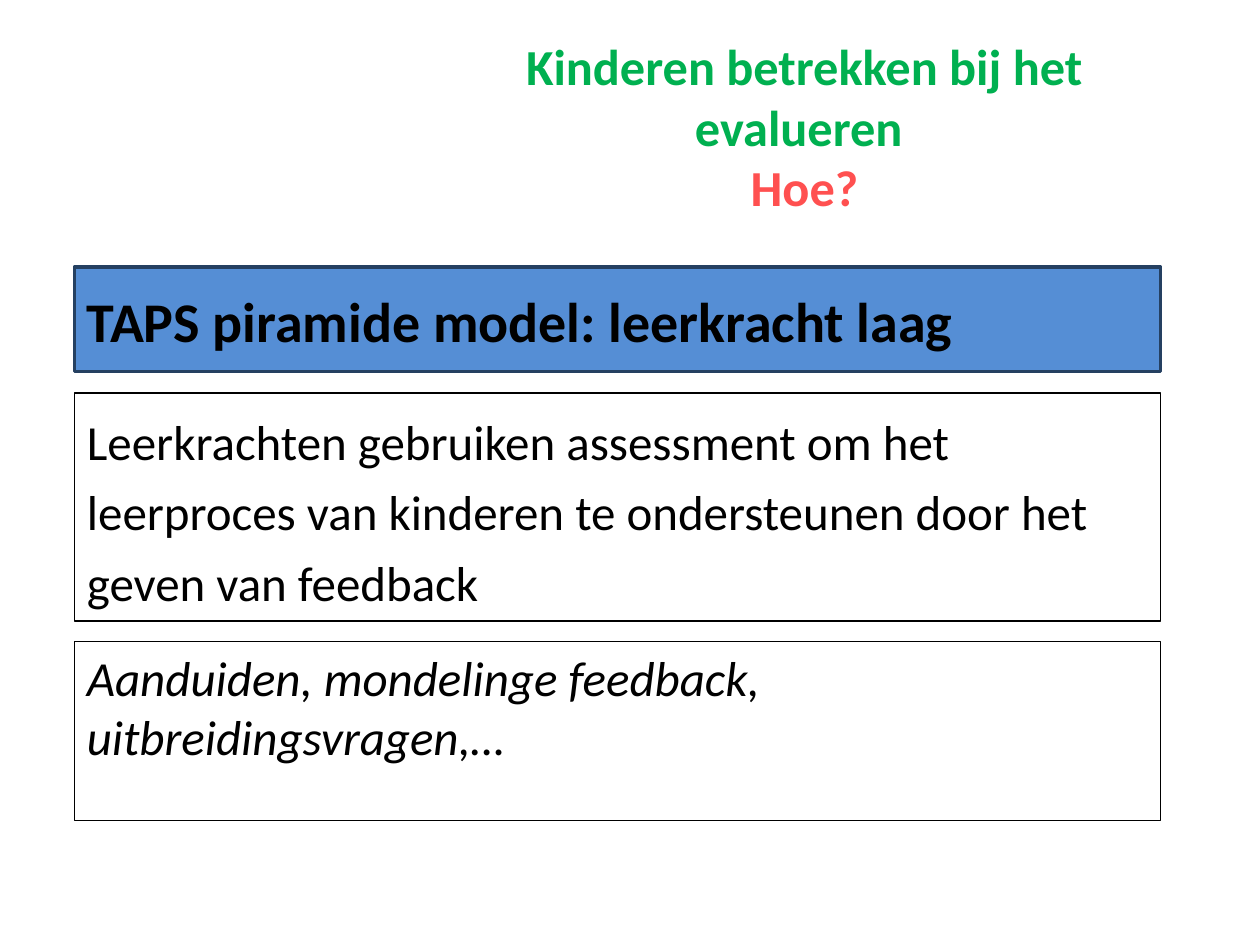
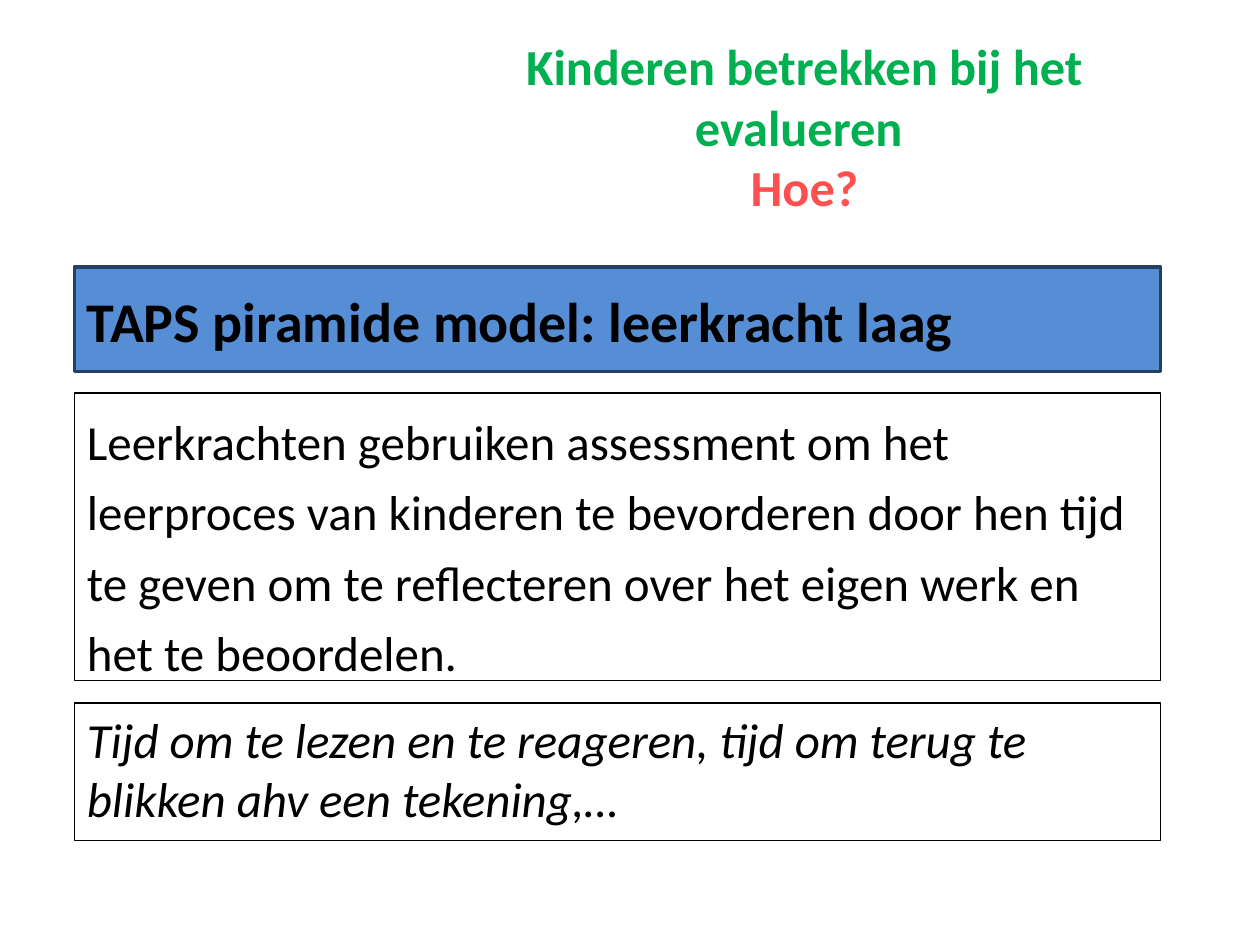
from dataclasses import dataclass
from typing import Optional

from lxml import etree
from pptx import Presentation
from pptx import util as u
from pptx.dml import color
from pptx.enum import shapes, text
from pptx.oxml import ns

PX = 9144  # EMU per px, at 100 px to the inch


@dataclass(frozen=True)
class Theme:
    font: str = "Calibri"
    ink: str = "000000"
    topic: str = "00B050"
    question: str = "FF5050"
    band_fill: str = "558ED5"
    band_line: str = "254061"
    title_size: float = 28.8
    band_size: float = 32
    body_size: float = 28


@dataclass(frozen=True)
class Frame:
    """A rectangle with a line of text; lengths in px."""
    top: int
    height: int
    size: float
    line: str
    line_width: float = 0.75
    left: int = 59
    width: int = 862
    fill: Optional[str] = None
    bold: bool = False
    italic: bool = False
    spacing: float = 1.0


@dataclass(frozen=True)
class Practice:
    statement: str
    statement_height: int
    examples: str
    examples_top: int
    examples_height: int


THEME = Theme()
TITLE = "Kinderen betrekken bij het evalueren \nHoe?"
BAND_TEXT = "TAPS piramide model: leerkracht laag"
BAND = Frame(212, 83, THEME.band_size, THEME.band_line, line_width=2,
             fill=THEME.band_fill, bold=True, spacing=1.2)
STATEMENT_TOP = 312

PRACTICES = [
    Practice("Leerkrachten gebruiken assessment om het leerproces van kinderen "
             "te ondersteunen door het geven van feedback", 181,
             "Aanduiden, mondelinge feedback, uitbreidingsvragen,…", 509, 142),
    Practice("Leerkrachten gebruiken assessment om het leerproces van kinderen "
             "te bevorderen door hen tijd te geven om te reflecteren over het "
             "eigen werk en het te beoordelen.", 228,
             "Tijd om te lezen en te reageren, tijd om terug te blikken "
             "ahv een tekening,…", 558, 109),
]


def place(box, left: int, top: int, width: int, height: int) -> None:
    box.left, box.top, box.width, box.height = (
        u.Emu(length * PX) for length in (left, top, width, height))


def style_span(span, size: float, ink: str, bold: bool = False,
               italic: bool = False) -> None:
    span.font.name = THEME.font
    span.font.size = u.Pt(size)
    span.font.bold = bold
    span.font.italic = italic
    span.font.color.rgb = color.RGBColor.from_string(ink)


def fill_frame(box, frame: Frame, words: str) -> None:
    place(box, frame.left, frame.top, frame.width, frame.height)
    if frame.fill:
        box.fill.solid()
        box.fill.fore_color.rgb = color.RGBColor.from_string(frame.fill)
    else:
        box.fill.background()
    box.line.color.rgb = color.RGBColor.from_string(frame.line)
    box.line.width = u.Pt(frame.line_width)
    body = box.text_frame
    body.text = words
    body.word_wrap = True
    body.auto_size = text.MSO_AUTO_SIZE.NONE
    body.vertical_anchor = text.MSO_ANCHOR.TOP
    para = body.paragraphs[0]
    para.alignment = text.PP_ALIGN.LEFT
    para.line_spacing = frame.spacing
    para.space_before = u.Pt(0)
    style_span(para.runs[0], frame.size, THEME.ink, frame.bold, frame.italic)


def remove_bullet(para) -> None:
    properties = para._p.get_or_add_pPr()
    properties.set("marL", "0")
    properties.set("indent", "0")
    etree.SubElement(properties, ns.qn("a:buNone"))


def add_frame(page, frame: Frame, words: str) -> None:
    box = page.shapes.add_shape(shapes.MSO_SHAPE.RECTANGLE, 0, 0, 0, 0)
    box.shadow.inherit = False
    fill_frame(box, frame, words)


def set_title(page) -> None:
    box = page.shapes.title
    place(box, 327, 30, 623, 140)
    body = box.text_frame
    body.auto_size = text.MSO_AUTO_SIZE.NONE
    body.vertical_anchor = text.MSO_ANCHOR.MIDDLE
    para = body.paragraphs[0]
    para.text = TITLE
    para.alignment = text.PP_ALIGN.CENTER
    for span, ink in zip(para.runs, (THEME.topic, THEME.question)):
        style_span(span, THEME.title_size, ink, bold=True)
    # The line break needs the title size too, or it stretches its line.
    line_break = para._p.find(ns.qn("a:br"))
    etree.SubElement(line_break, ns.qn("a:rPr"),
                     sz=str(round(THEME.title_size * 100)))


def add_practice_page(deck, practice: Practice) -> None:
    page = deck.slides.add_slide(deck.slide_layouts.get_by_name("Title and Content"))
    set_title(page)
    statement = Frame(STATEMENT_TOP, practice.statement_height,
                      THEME.body_size, THEME.ink, spacing=1.2)
    box = page.placeholders[1]
    fill_frame(box, statement, practice.statement)
    remove_bullet(box.text_frame.paragraphs[0])
    add_frame(page, BAND, BAND_TEXT)
    examples = Frame(practice.examples_top, practice.examples_height,
                     THEME.body_size, THEME.ink, italic=True)
    add_frame(page, examples, practice.examples)


def main() -> None:
    deck = Presentation()
    deck.slide_width = u.Emu(1000 * PX)
    deck.slide_height = u.Emu(750 * PX)
    for practice in PRACTICES:
        add_practice_page(deck, practice)
    deck.save("out.pptx")


if __name__ == "__main__":
    main()
